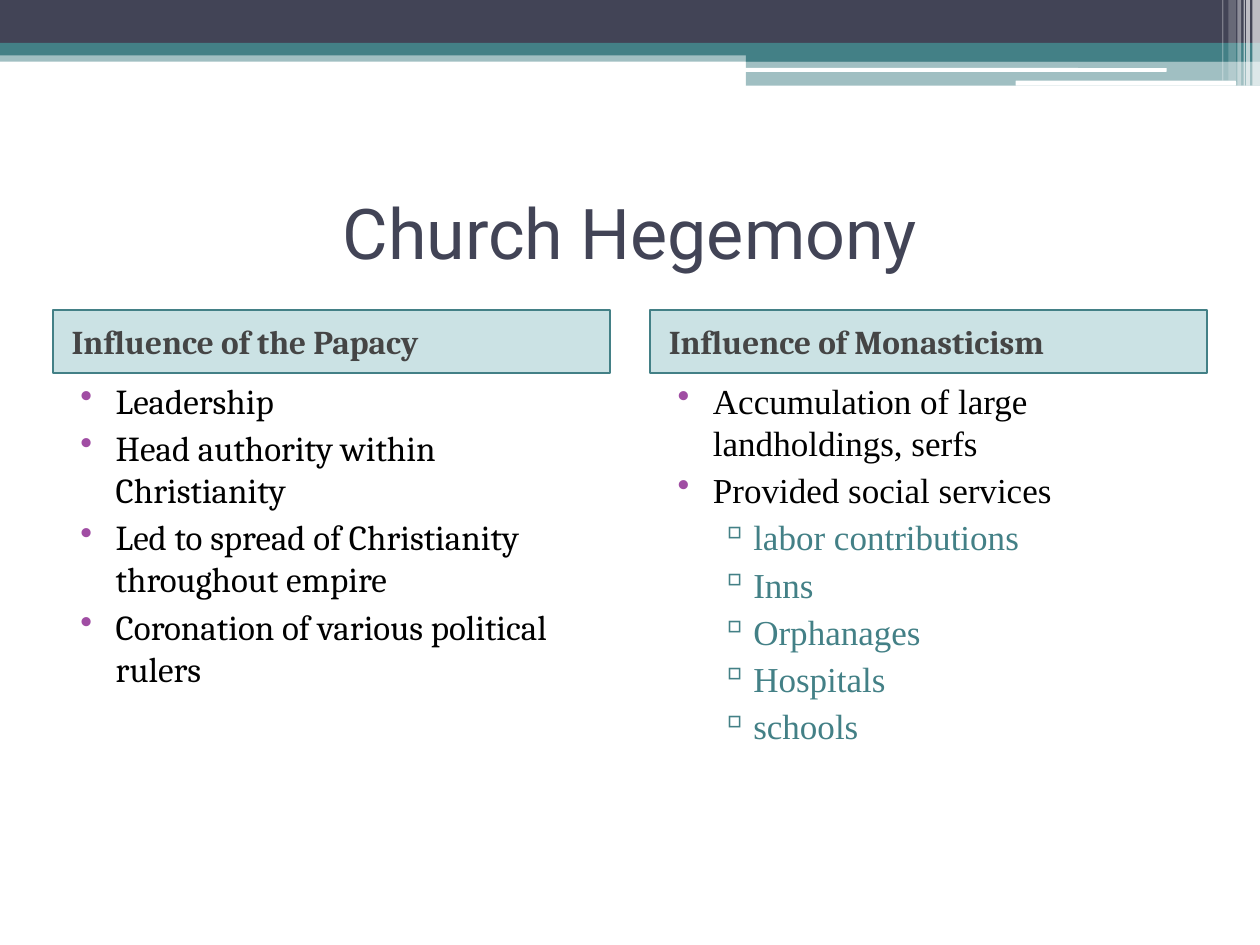
from lxml import etree
from pptx import Presentation
from pptx import util as u
from pptx.dml.color import RGBColor
from pptx.enum import shapes, text
from pptx.oxml.ns import qn

PX = 9144  # EMU per px, 100 px to the inch
W, H = 1000, 750
COLORS = {"navy": "424456", "teal": "438086", "tint": "328E97", "white": "FFFFFF",
          "heading": "454545", "body": "000000", "bullet": "A04DA3"}
RECT = shapes.MSO_SHAPE.RECTANGLE
ROUND = shapes.MSO_SHAPE.ROUNDED_RECTANGLE
# Per level: bullet, bullet colour, text colour, left margin, hanging indent
LEVELS = [("•", "bullet", "body", 40, -28), ("▫", "teal", "teal", 72, -27)]


def px(n):
    return u.Emu(n * PX)


def rgb(name):
    return RGBColor.from_string(COLORS[name])


def add_block(s, x, y, w, h, color, alpha=100, kind=RECT, line=None):
    sp = s.shapes.add_shape(kind, px(x), px(y), px(w), px(h))
    sp.shadow.inherit = False
    sp.fill.solid()
    sp.fill.fore_color.rgb = rgb(color)
    if alpha < 100:
        clr = sp.fill._xPr.find(qn("a:solidFill"))[0]
        etree.SubElement(clr, qn("a:alpha"), val=str(alpha * 1000))
    if line:
        sp.line.color.rgb = rgb(line)
        sp.line.width = u.Pt(1)
    else:
        sp.line.fill.background()
    return sp


def add_text(s, x, y, w, h):
    tf = s.shapes.add_textbox(px(x), px(y), px(w), px(h)).text_frame
    tf.word_wrap = True
    return tf


def style(p, size, font, color, bold=False):
    p.font.size = u.Pt(size)
    p.font.name = font
    p.font.color.rgb = rgb(color)
    p.font.bold = bold


def set_bullet(p, char, color, margin, indent):
    pPr = p._p.get_or_add_pPr()
    pPr.set("marL", str(margin * PX))
    pPr.set("indent", str(indent * PX))
    clr = etree.Element(qn("a:buClr"))
    etree.SubElement(clr, qn("a:srgbClr"), val=COLORS[color])
    bu = etree.Element(qn("a:buChar"), char=char)
    # Bullet elements go between the spacing and the default run properties
    pPr.find(qn("a:defRPr")).addprevious(clr)
    clr.addnext(bu)


def banner(s, x, y, w):
    # Full-width bands
    add_block(s, x, y + 40, w, 9, "teal", 50)
    add_block(s, x, y, w, 34, "navy")
    add_block(s, x, y + 34, w, 10, "teal")
    # Right-hand step with white rules
    add_block(s, x + 592, y + 39, w - 592, 10, "teal")
    add_block(s, x + 592, y + 48, w - 592, 20, "teal", 50)
    add_block(s, x + 591, y + 54, 335, 3, "white", kind=ROUND)
    add_block(s, x + 806, y + 64, 175, 4, "white", kind=ROUND)
    # Translucent stripes at the right edge: left, width, height, alpha
    for left, width, height, alpha in [(994, 6, 68, 65), (989, 3, 68, 65), (987, 1, 68, 60),
                                       (982, 3, 68, 40), (975, 6, 64, 20), (970, 1, 64, 30)]:
        add_block(s, x + left, y, width, height, "white", alpha)


def title(s, x, y, w, h):
    tf = add_text(s, x, y, w, h)
    tf.vertical_anchor = text.MSO_ANCHOR.MIDDLE
    p = tf.paragraphs[0]
    p.text = "Church Hegemony"
    p.alignment = text.PP_ALIGN.CENTER
    style(p, 40, "Roboto", "navy")


def column(s, x, y, w, h, heading, font, items):
    # Heading bar
    bar_h = 50
    tf = add_block(s, x, y, w, bar_h, "tint", 25, line="teal").text_frame
    tf.word_wrap = True
    tf.vertical_anchor = text.MSO_ANCHOR.MIDDLE
    p = tf.paragraphs[0]
    p.text = heading
    p.alignment = text.PP_ALIGN.LEFT
    p.space_before = u.Pt(3)
    p._p.get_or_add_pPr().set("marL", str(5 * PX))
    style(p, 19, "Cambria", "heading", bold=True)

    # Bulleted list
    tf = add_text(s, x, y + bar_h, w, h - bar_h)
    for i, (level, item) in enumerate(items):
        char, bullet_color, color, margin, indent = LEVELS[level]
        p = tf.paragraphs[0] if i == 0 else tf.add_paragraph()
        p.text = item
        p.level = level
        p.space_before = u.Pt(3)
        style(p, 20, font, color)
        set_bullet(p, char, bullet_color, margin, indent)


def main():
    prs = Presentation()
    prs.slide_width, prs.slide_height = px(W), px(H)
    s = prs.slides.add_slide(prs.slide_layouts[6])

    banner(s, 0, 0, W)
    margin, col_w = 42, 442
    title(s, margin, 125, W - 2 * margin, 117)
    columns = [
        ("Influence of the Papacy", "Cambria",
         [(0, "Leadership"),
          (0, "Head authority within Christianity"),
          (0, "Led to spread of Christianity throughout empire"),
          (0, "Coronation of various political rulers")]),
        ("Influence of Monasticism", "Times New Roman",
         [(0, "Accumulation of large landholdings, serfs"),
          (0, "Provided social services"),
          (1, "labor contributions"),
          (1, "Inns"),
          (1, "Orphanages"),
          (1, "Hospitals"),
          (1, "schools")]),
    ]
    for x, col in zip((margin, W - margin - col_w), columns):
        column(s, x, 246, col_w, 475, *col)

    prs.save("out.pptx")


if __name__ == "__main__":
    main()
